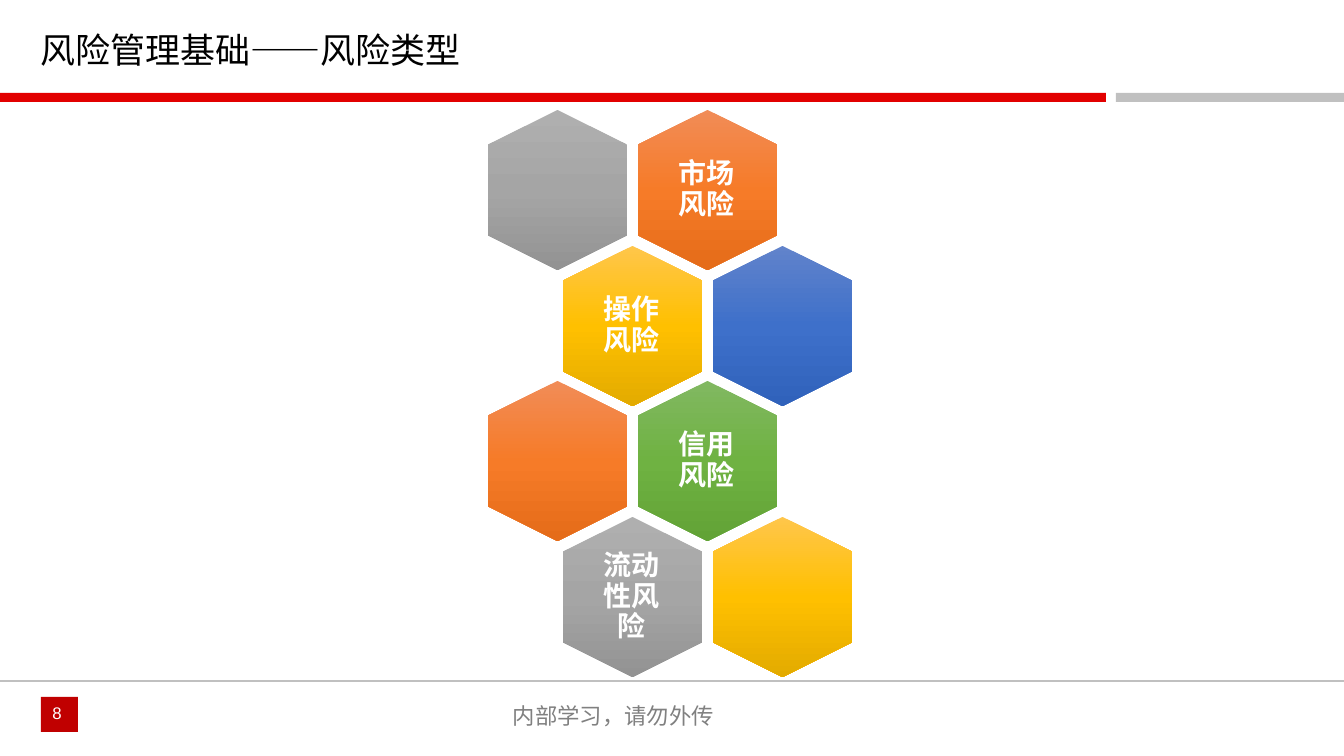
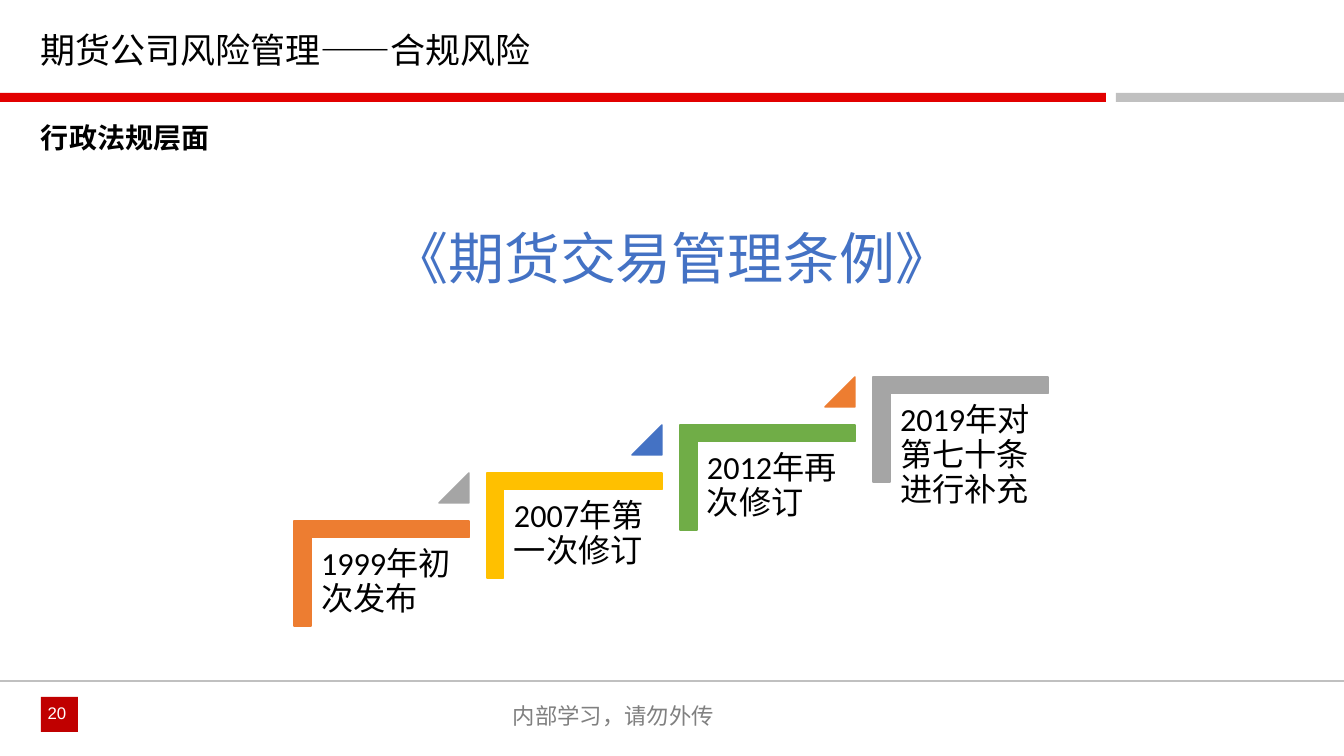
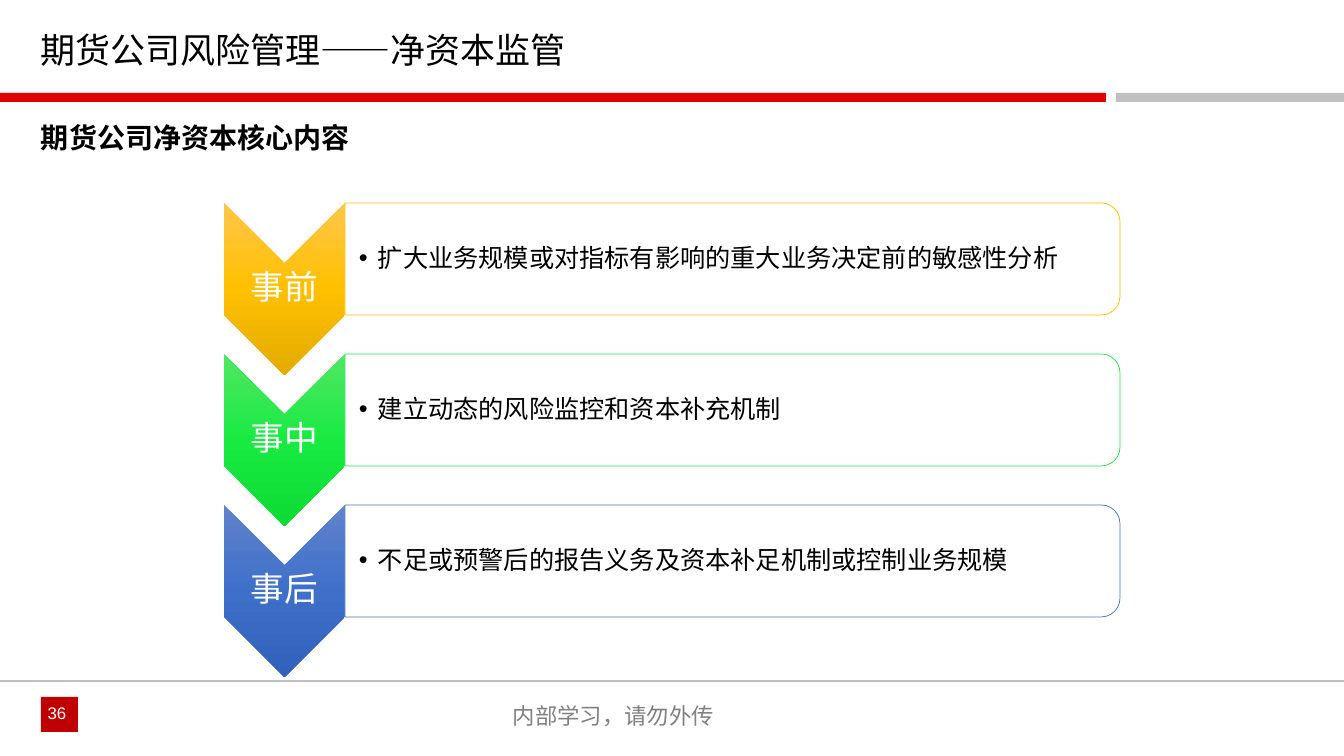
from dataclasses import dataclass
from typing import NamedTuple, Optional

from lxml.etree import SubElement
from pptx import Presentation
from pptx.dml.color import RGBColor
from pptx.enum.shapes import MSO_CONNECTOR, MSO_SHAPE
from pptx.enum.text import MSO_ANCHOR, MSO_AUTO_SIZE, PP_ALIGN
from pptx.oxml.ns import qn
from pptx.util import Emu, Pt

EMU_PER_PX = 914400 / 100.8


def px(length: float) -> Emu:
    return Emu(round(length * EMU_PER_PX))


# Theme
@dataclass(frozen=True)
class Theme:
    cjk: str = "Noto Sans CJK SC"
    latin: str = "Calibri"
    number_font: str = "Arial"
    black: str = "000000"
    white: str = "FFFFFF"
    red: str = "E20000"
    dark_red: str = "C00000"
    silver: str = "C0C0C0"
    footer_gray: str = "808080"
    orange: str = "ED7D31"
    gray: str = "A5A5A5"
    yellow: str = "FFC000"
    blue: str = "4472C4"
    green: str = "70AD47"
    lime: str = "23E148"
    orange_shade: tuple = ("F18C57", "F67B28", "E56C19")
    gray_shade: tuple = ("AFAFAF", "A5A5A5", "939393")
    yellow_shade: tuple = ("FFC64B", "FFC000", "E3AB00")
    blue_shade: tuple = ("6183CB", "3E70CA", "3062BB")
    green_shade: tuple = ("81B861", "6FB242", "62A336")
    lime_shade: tuple = ("51E663", "19EA42", "0CDB34")
    headline_size: int = 40
    title_size: int = 25
    stage_size: int = 24
    step_size: int = 23
    heading_size: int = 20
    detail_size: int = 18
    footer_size: int = 16
    number_size: int = 12


THEME = Theme()


class Frame(NamedTuple):
    left: int
    top: int
    width: int
    height: int

    def place(self, shape) -> None:
        shape.left, shape.top, shape.width, shape.height = map(px, self)

    def quarter_turn(self) -> "Frame":
        """Frame that covers this one after a rotation by 90 degrees."""
        shift = (self.width - self.height) / 2
        return Frame(self.left + shift, self.top - shift, self.height, self.width)


class Style(NamedTuple):
    size: int
    color: str = THEME.black
    font: str = THEME.latin
    bold: bool = False
    align: PP_ALIGN = PP_ALIGN.LEFT
    anchor: MSO_ANCHOR = MSO_ANCHOR.TOP
    spacing: Optional[float] = 0.9
    insets: tuple = (10, 5, 10, 5)
    wrap: bool = True
    bullet: bool = False


CENTER, MIDDLE = PP_ALIGN.CENTER, MSO_ANCHOR.MIDDLE
TITLE = Style(THEME.title_size, font=THEME.cjk, anchor=MIDDLE)
HEADING = Style(THEME.heading_size, font=THEME.cjk, bold=True)
FOOTER = Style(THEME.footer_size, THEME.footer_gray, THEME.cjk, spacing=None, wrap=False)
NUMBER = Style(THEME.number_size, THEME.white, THEME.number_font, align=CENTER, spacing=None)
HEXAGON = Style(THEME.heading_size, THEME.white, THEME.cjk, True, CENTER, MIDDLE,
                insets=(8, 8, 8, 8))
HEADLINE = Style(THEME.headline_size, THEME.blue, align=CENTER, spacing=None, wrap=False)
STEP = Style(THEME.step_size, insets=(10, 10, 10, 10))
STAGE = Style(THEME.stage_size, THEME.white, align=CENTER, anchor=MIDDLE, insets=(2, 2, 2, 2))
DETAIL = Style(THEME.detail_size, anchor=MIDDLE, insets=(14, 1, 1, 1), bullet=True)


# Drawing helpers
def write(shape, text: str, style: Style) -> None:
    box = shape.text_frame
    box.word_wrap = style.wrap
    box.auto_size = MSO_AUTO_SIZE.NONE
    box.vertical_anchor = style.anchor
    (box.margin_left, box.margin_top,
     box.margin_right, box.margin_bottom) = map(px, style.insets)
    para = box.paragraphs[0]
    properties = para._p.get_or_add_pPr()
    indent = px(19) if style.bullet else 0
    properties.set("marL", str(indent))
    properties.set("indent", str(-indent))
    if style.bullet:
        SubElement(properties, qn("a:buFont"), typeface=THEME.number_font)
        SubElement(properties, qn("a:buChar"), char="•")
    else:
        SubElement(properties, qn("a:buNone"))
    para.alignment = style.align
    para.space_before = Pt(0)
    if style.spacing:
        para.line_spacing = style.spacing
    span = para.add_run()
    span.text = text
    span.font.name = style.font
    span.font.size = Pt(style.size)
    span.font.bold = style.bold
    span.font.color.rgb = RGBColor.from_string(style.color)
    SubElement(span.font._element, qn("a:ea"), typeface=THEME.cjk)


def add_text(page, frame: Frame, text: str, style: Style) -> None:
    write(page.shapes.add_textbox(*map(px, frame)), text, style)


def shade(shape, colors: tuple) -> None:
    """Vertical gradient that stays upright when the shape is turned."""
    shape.fill.gradient()
    shape.fill.gradient_angle = 270
    gradient = shape.element.spPr.find(qn("a:gradFill"))
    gradient.set("rotWithShape", "0")
    stops = gradient.find(qn("a:gsLst"))
    for stop in list(stops):
        stops.remove(stop)
    for index, color in enumerate(colors):
        stop = SubElement(stops, qn("a:gs"), pos=str(index * 50000))
        SubElement(stop, qn("a:srgbClr"), val=color)


def add_figure(page, kind: MSO_SHAPE, frame: Frame, fill, line: Optional[str] = None,
               line_width: float = 1, turned: bool = False):
    shape = page.shapes.add_shape(kind, *map(px, frame.quarter_turn() if turned else frame))
    shape.shadow.inherit = False
    if turned:
        shape.rotation = 90
    if isinstance(fill, tuple):
        shade(shape, fill)
    else:
        shape.fill.solid()
        shape.fill.fore_color.rgb = RGBColor.from_string(fill)
    if line:
        shape.line.color.rgb = RGBColor.from_string(line)
        shape.line.width = Pt(line_width)
    else:
        shape.line.fill.background()
    return shape


# Shared master and page frame
def furnish_master(deck, page) -> None:
    """Draw bands and footer on a page, then move them to the master."""
    for frame, color in (
        (Frame(0, 93, 1106, 9), THEME.red),
        (Frame(1116, 93, 228, 9), THEME.silver),
        (Frame(41, 697, 37, 35), THEME.dark_red),
    ):
        add_figure(page, MSO_SHAPE.RECTANGLE, frame, color)
    rule = page.shapes.add_connector(MSO_CONNECTOR.STRAIGHT, px(0), px(681), px(1344), px(681))
    rule.line.color.rgb = RGBColor.from_string(THEME.silver)
    rule.line.width = Pt(1)
    SubElement(rule.element.spPr, qn("a:effectLst"))
    add_text(page, Frame(503, 697, 224, 37), "内部学习，请勿外传", FOOTER)

    tree = deck.slide_master.shapes.element
    parts = [shape for shape in page.shapes if not shape.is_placeholder]
    for number, part in enumerate(parts, start=100):
        part.element.find(".//" + qn("p:cNvPr")).set("id", str(number))
        tree.append(part.element)


def add_page(deck, number: int, title: str, heading: Optional[str] = None):
    page = deck.slides.add_slide(deck.slide_layouts[1 if heading else 5])
    if len(deck.slides) == 1:
        furnish_master(deck, page)
    Frame(31, 26, 1075, 52).place(page.shapes.title)
    write(page.shapes.title, title, TITLE)
    if heading:
        body = page.placeholders[1]
        Frame(31, 119, 1276, 44).place(body)
        write(body, heading, HEADING)
    add_text(page, Frame(31, 698, 52, 30), str(number), NUMBER)
    return page


# Risk types: a honeycomb of four rows
class Cell(NamedTuple):
    colors: tuple
    label: str = ""


HONEYCOMB = (
    (Cell(THEME.gray_shade), Cell(THEME.orange_shade, "市场风险")),
    (Cell(THEME.yellow_shade, "操作风险"), Cell(THEME.blue_shade)),
    (Cell(THEME.orange_shade), Cell(THEME.green_shade, "信用风险")),
    (Cell(THEME.gray_shade, "流动性风险"), Cell(THEME.yellow_shade)),
)


def add_risk_types(deck) -> None:
    page = add_page(deck, 8, "风险管理基础——风险类型")
    for row, cells in enumerate(HONEYCOMB):
        top = 110 + (row * 271 + 1) // 2
        for column, cell in enumerate(cells):
            left = 488 + column * 150 + row % 2 * 75
            add_figure(page, MSO_SHAPE.HEXAGON, Frame(left, top, 139, 160), cell.colors,
                       turned=True)
            if cell.label:
                add_text(page, Frame(left + 21, top + 25, 96, 110), cell.label, HEXAGON)


# Regulation history: rising steps
class Step(NamedTuple):
    text: str
    color: str
    marker: Optional[str] = None


STEPS = (
    Step("1999年初次发布", THEME.orange, THEME.gray),
    Step("2007年第一次修订", THEME.yellow, THEME.blue),
    Step("2012年再次修订", THEME.green, THEME.orange),
    Step("2019年对第七十条进行补充", THEME.gray),
)


def add_regulation(deck) -> None:
    page = add_page(deck, 20, "期货公司风险管理——合规风险", "行政法规层面")
    for index, step in enumerate(STEPS):
        left, top = 294 + index * 193, 521 - index * 48
        corner = add_figure(page, MSO_SHAPE.CORNER, Frame(left, top, 175, 105),
                            step.color, step.color, turned=True)
        corner.adjustments[0] = corner.adjustments[1] = 0.16
        add_text(page, Frame(left + 17, top + 17, 158, 138), step.text, STEP)
        if step.marker:
            triangle = add_figure(page, MSO_SHAPE.ISOSCELES_TRIANGLE,
                                  Frame(left + 145, top - 48, 30, 30), step.marker, step.marker)
            triangle.adjustments[0] = 1
    add_text(page, Frame(379, 219, 586, 78), "《期货交易管理条例》", HEADLINE)


# Net capital: three stages with their measures
class Stage(NamedTuple):
    name: str
    detail: str
    colors: tuple
    line: str


STAGES = (
    Stage("事前", "扩大业务规模或对指标有影响的重大业务决定前的敏感性分析",
          THEME.yellow_shade, THEME.yellow),
    Stage("事中", "建立动态的风险监控和资本补充机制", THEME.lime_shade, THEME.lime),
    Stage("事后", "不足或预警后的报告义务及资本补足机制或控制业务规模",
          THEME.blue_shade, THEME.blue),
)


def add_net_capital(deck) -> None:
    page = add_page(deck, 36, "期货公司风险管理——净资本监管", "期货公司净资本核心内容")
    for index, stage in enumerate(STAGES):
        top = 203 + index * 151
        add_figure(page, MSO_SHAPE.CHEVRON, Frame(224, top, 121, 172), stage.colors, turned=True)
        add_text(page, Frame(224, top + 60, 121, 51), stage.name, STAGE)
        add_figure(page, MSO_SHAPE.ROUND_2_SAME_RECTANGLE, Frame(345, top, 775, 112),
                   THEME.white, stage.line, 0.5, turned=True)
        add_text(page, Frame(345, top + 6, 770, 101), stage.detail, DETAIL)


def main() -> None:
    deck = Presentation()
    deck.slide_width, deck.slide_height = px(1344), px(756)
    add_risk_types(deck)
    add_regulation(deck)
    add_net_capital(deck)
    deck.save("out.pptx")


if __name__ == "__main__":
    main()
